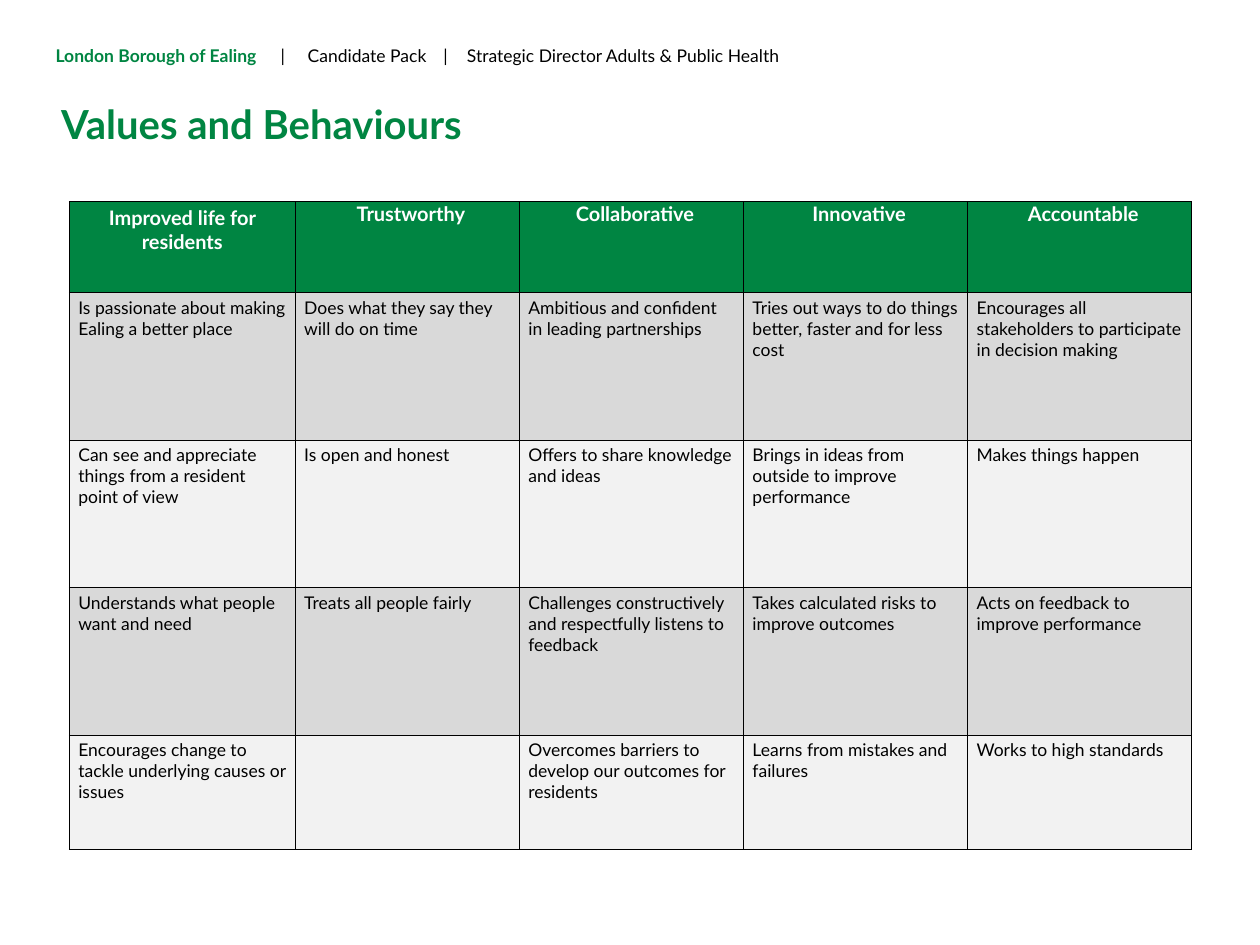
from dataclasses import dataclass

from pptx import Presentation
from pptx import util as u
from pptx.dml.color import RGBColor
from pptx.enum import shapes, text
from pptx.oxml import parse_xml
from pptx.oxml.ns import nsdecls

GREEN, BLACK, WHITE = "008542", "000000", "FFFFFF"
ROW_FILLS = ("D9D9D9", "F2F2F2")
FONT = "Lato"
SLIDE_WIDTH, SLIDE_HEIGHT = u.Inches(14), u.Inches(10.5)


@dataclass
class Box:
    """A rectangle in percent of the slide's width and height."""
    left: float
    top: float
    width: float
    height: float

    def lengths(self) -> tuple:
        return across(self.left), down(self.top), across(self.width), down(self.height)


@dataclass
class Value:
    """One column of the table: a value and its behaviours."""
    name: str
    behaviours: tuple
    width: float = 17.79


HEADER_BOX = Box(3.71, 4.29, 78.21, 3.24)
TITLE_BOX = Box(4.14, 10.1, 34.43, 11.24)
TABLE_BOX = Box(5.5, 21.33, 89.09, 68.57)
ROW_HEIGHTS = (9.62, 15.62, 15.62, 15.62, 12.1)
HEADER_TABS = (2.5, 2.8, 4.31, 4.57)

VALUES = (
    Value("Improved life for residents", (
        "Is passionate about making Ealing a better place",
        "Can see and appreciate things from a resident point of view",
        "Understands what people want and need",
        "Encourages change to tackle underlying causes or issues"), 17.93),
    Value("Trustworthy", (
        "Does what they say they will do on time",
        "Is open and honest",
        "Treats all people fairly",
        "")),
    Value("Collaborative", (
        "Ambitious and confident in leading partnerships",
        "Offers to share knowledge and ideas",
        "Challenges constructively and respectfully listens to feedback",
        "Overcomes barriers to develop our outcomes for residents")),
    Value("Innovative", (
        "Tries out ways to do things better, faster and for less cost",
        "Brings in ideas from outside to improve performance",
        "Takes calculated risks to improve outcomes",
        "Learns from mistakes and failures")),
    Value("Accountable", (
        "Encourages all stakeholders to participate in decision making",
        "Makes things happen",
        "Acts on feedback to improve performance",
        "Works to high standards")),
)


def across(percent: float) -> int:
    return round(SLIDE_WIDTH * percent / 100)


def down(percent: float) -> int:
    return round(SLIDE_HEIGHT * percent / 100)


def color(hex_code: str) -> RGBColor:
    return RGBColor.from_string(hex_code)


def set_font(font, size: float, hex_code: str, bold: bool = False) -> None:
    font.name, font.size, font.bold = FONT, u.Pt(size), bold
    font.color.rgb = color(hex_code)


def add_header(slide) -> None:
    shape = slide.shapes.add_shape(shapes.MSO_SHAPE.RECTANGLE, *HEADER_BOX.lengths())
    shape.shadow.inherit = False
    shape.fill.solid()
    shape.fill.fore_color.rgb = color(WHITE)
    shape.line.fill.background()
    shape.text_frame.vertical_anchor = text.MSO_ANCHOR.TOP
    paragraph = shape.text_frame.paragraphs[0]
    paragraph.alignment = text.PP_ALIGN.LEFT
    stops = "".join(f'<a:tab pos="{u.Inches(stop)}" algn="l"/>' for stop in HEADER_TABS)
    paragraph._p.get_or_add_pPr().append(
        parse_xml(f'<a:tabLst {nsdecls("a")}>{stops}</a:tabLst>'))
    borough, details = paragraph.add_run(), paragraph.add_run()
    borough.text = "London Borough of Ealing"
    details.text = "\t|\tCandidate Pack\t|\tStrategic Director Adults & Public Health"
    set_font(borough.font, 14, GREEN, bold=True)
    set_font(details.font, 14, BLACK)


def set_title(slide) -> None:
    title = slide.shapes.title
    title.left, title.top, title.width, title.height = TITLE_BOX.lengths()
    frame = title.text_frame
    frame.text = "Values and Behaviours"
    frame.word_wrap = False
    frame.auto_size = text.MSO_AUTO_SIZE.NONE
    frame.vertical_anchor = text.MSO_ANCHOR.TOP
    paragraph = frame.paragraphs[0]
    paragraph.alignment = text.PP_ALIGN.LEFT
    set_font(paragraph.font, 32, GREEN, bold=True)


def fill_cell(cell, words: str, fill: str, is_heading: bool) -> None:
    # Borders come before the fill in the cell properties
    properties = cell._tc.get_or_add_tcPr()
    for side in ("lnL", "lnR", "lnT", "lnB"):
        properties.append(parse_xml(
            f'<a:{side} {nsdecls("a")} w="{u.Pt(1)}"><a:solidFill>'
            f'<a:srgbClr val="{BLACK}"/></a:solidFill></a:{side}>'))
    cell.fill.solid()
    cell.fill.fore_color.rgb = color(fill)
    cell.text = words
    paragraph = cell.text_frame.paragraphs[0]
    if is_heading:
        paragraph.alignment = text.PP_ALIGN.CENTER
        set_font(paragraph.font, 16, WHITE, bold=True)
    else:
        set_font(paragraph.font, 14, BLACK)


def add_values_table(slide) -> None:
    table = slide.shapes.add_table(
        len(ROW_HEIGHTS), len(VALUES), *TABLE_BOX.lengths()).table
    for row, height in zip(table.rows, ROW_HEIGHTS):
        row.height = down(height)
    for column, value in enumerate(VALUES):
        table.columns[column].width = across(value.width)
        fill_cell(table.cell(0, column), value.name, GREEN, is_heading=True)
        for index, behaviour in enumerate(value.behaviours):
            fill_cell(table.cell(index + 1, column), behaviour,
                      ROW_FILLS[index % 2], is_heading=False)
    # One-word headings sit tight against the top edge
    for column in range(1, len(VALUES)):
        heading = table.cell(0, column)
        heading.margin_top = heading.margin_right = heading.margin_bottom = 0
        heading.margin_left = u.Inches(0.08)


def main() -> None:
    presentation = Presentation()
    presentation.slide_width, presentation.slide_height = SLIDE_WIDTH, SLIDE_HEIGHT
    slide = presentation.slides.add_slide(presentation.slide_layouts[5])
    add_header(slide)
    set_title(slide)
    add_values_table(slide)
    presentation.save("out.pptx")


if __name__ == "__main__":
    main()
